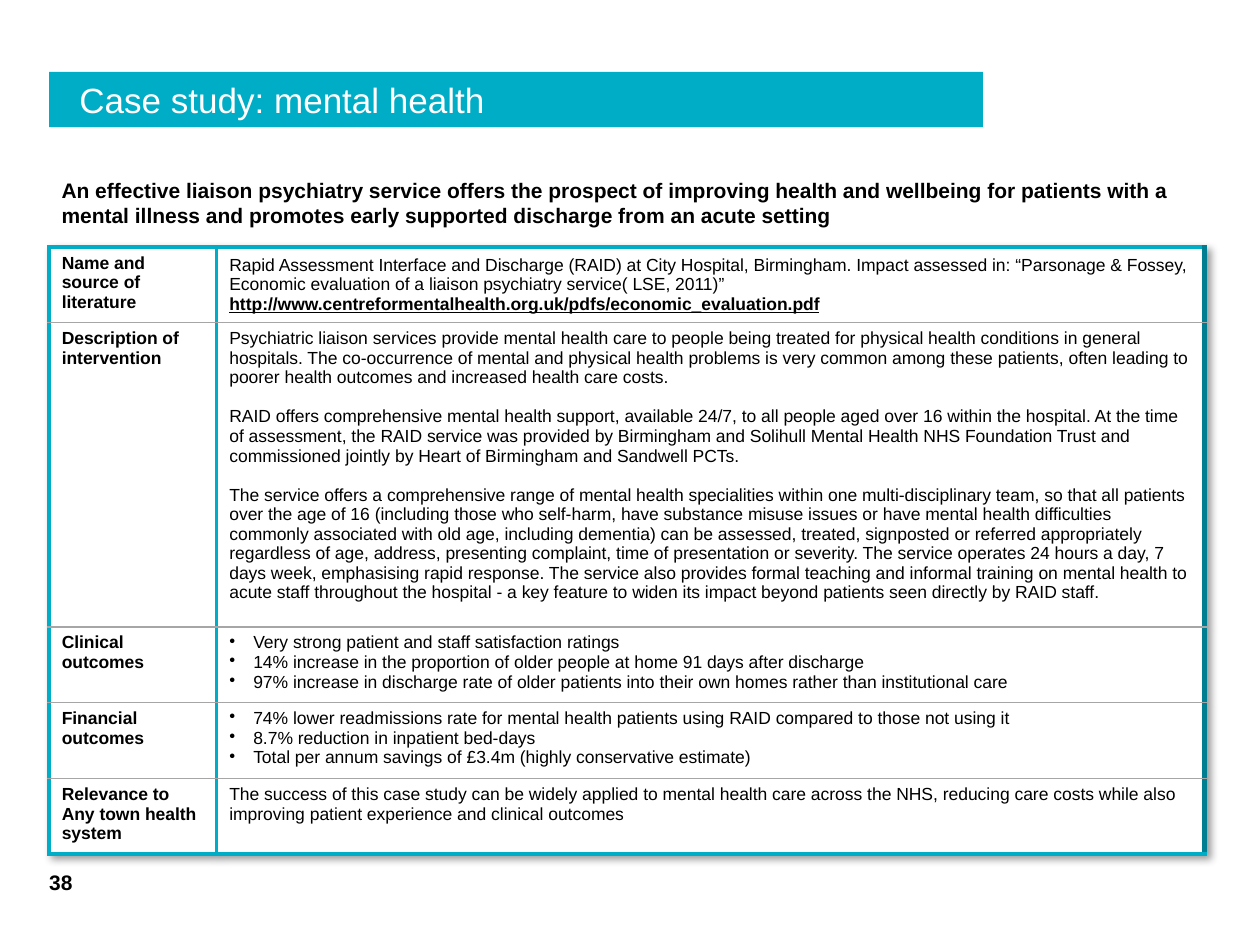
"""Build the mental health case study slide."""
from lxml import etree
from pptx import Presentation
from pptx import util as u
from pptx.dml.color import RGBColor
from pptx.enum import shapes, text
from pptx.oxml import parse_xml
from pptx.oxml.ns import nsdecls, qn

TEAL, DARK_TEAL, GREY = "00ADC6", "007E91", "A6A6A6"
BLACK, WHITE = "000000", "FFFFFF"
SHADOW = (
    f'<a:effectLst {nsdecls("a")}><a:outerShdw blurRad="50800" dist="38100" '
    'dir="2700000" algn="tl" rotWithShape="0"><a:prstClr val="black">'
    '<a:alpha val="40000"/></a:prstClr></a:outerShdw></a:effectLst>'
)
TOP, MIDDLE, BOTTOM = (
    text.MSO_ANCHOR.TOP, text.MSO_ANCHOR.MIDDLE, text.MSO_ANCHOR.BOTTOM)

COLUMN_WIDTHS = (1.33, 7.84)
CASE_ROWS = [
    (0.57, "Name and source of literature", [
        "Rapid Assessment Interface and Discharge (RAID) at City Hospital, Birmingham. Impact assessed in: “Parsonage & Fossey, Economic evaluation of a liaison psychiatry service( LSE, 2011)”",
        "http://www.centreformentalhealth.org.uk/pdfs/economic_evaluation.pdf",
    ], {}),
    (2.27, "Description of intervention", [
        "Psychiatric liaison services provide mental health care to people being treated for physical health conditions in general hospitals. The co-occurrence of mental and physical health problems is very common among these patients, often leading to poorer health outcomes and increased health care costs.",
        "RAID offers comprehensive mental health support, available 24/7, to all people aged over 16 within the hospital. At the time of assessment, the RAID service was provided by Birmingham and Solihull Mental Health NHS Foundation Trust and commissioned jointly by Heart of Birmingham and Sandwell PCTs.",
        "The service offers a comprehensive range of mental health specialities within one multi-disciplinary team, so that all patients over the age of 16 (including those who self-harm, have substance misuse issues or have mental health difficulties commonly associated with old age, including dementia) can be assessed, treated, signposted or referred appropriately regardless of age, address, presenting complaint, time of presentation or severity. The service operates 24 hours a day, 7 days week, emphasising rapid response. The service also provides formal teaching and informal training on mental health to acute staff throughout the hospital - a key feature to widen its impact beyond patients seen directly by RAID staff.",
    ], {"gap": 11.2}),
    (0.57, "Clinical outcomes", [
        "Very strong patient and staff satisfaction ratings",
        "14% increase in the proportion of older people at home 91 days after discharge",
        "97% increase in discharge rate of older patients into their own homes rather than institutional care",
    ], {"bullet": True}),
    (0.58, "Financial outcomes", [
        "74% lower readmissions rate for mental health patients using RAID compared to those not using it",
        "8.7% reduction in inpatient bed-days",
        "Total per annum savings of £3.4m (highly conservative estimate)",
    ], {"bullet": True}),
    (0.57, "Relevance to Any town health system", [
        "The success of this case study can be widely applied to mental health care across the NHS, reducing care costs while also improving patient experience and clinical outcomes",
    ], {}),
]


def colour(value):
    return RGBColor.from_string(value)


def inches(values):
    return [u.Inches(value) for value in values]


def apply(target, values):
    for name, value in values.items():
        setattr(target, name, value)


class CaseSlide:
    """Hold the text style and the slide being built."""

    def __init__(self, slide, font="Arial"):
        self.slide = slide
        self.font = font

    def add_wording(self, frame, paragraphs, size, ink=BLACK, bold=False, gap=0, bullet=False):
        for index, wording in enumerate(paragraphs):
            paragraph = frame.add_paragraph() if index else frame.paragraphs[0]
            if bullet:
                properties = paragraph._p.get_or_add_pPr()
                properties.set("marL", str(u.Inches(0.19)))
                properties.set("indent", str(u.Inches(-0.19)))
                etree.SubElement(properties, qn("a:buChar"), char="•")
            if index and gap:
                paragraph.space_before = u.Pt(gap)
            run = paragraph.add_run()
            run.text = wording
            is_address = wording.startswith("http")
            apply(run.font, {"name": self.font, "size": u.Pt(size),
                             "bold": bold or is_address, "underline": is_address})
            run.font.color.rgb = colour(ink)

    def frame(self, shape, anchor, insets):
        left, top, right, bottom = inches(insets)
        apply(shape.text_frame, {
            "word_wrap": True, "vertical_anchor": anchor, "margin_left": left,
            "margin_top": top, "margin_right": right, "margin_bottom": bottom})
        return shape.text_frame

    def banner(self, wording, box):
        bar = self.slide.shapes.add_shape(shapes.MSO_SHAPE.RECTANGLE, *inches(box))
        bar.shadow.inherit = False
        bar.fill.solid()
        bar.fill.fore_color.rgb = colour(TEAL)
        bar.line.fill.background()
        frame = self.frame(bar, MIDDLE, (0.24, 0, 0, 0))
        self.add_wording(frame, [wording], 20, WHITE)
        frame.paragraphs[0].alignment = text.PP_ALIGN.LEFT

    def label(self, wording, box, anchor=TOP, insets=(0, 0, 0, 0)):
        holder = self.slide.shapes.add_textbox(*inches(box))
        self.add_wording(self.frame(holder, anchor, insets), [wording], 12, bold=True)

    def borders(self, cell, edges):
        properties = cell._tc.get_or_add_tcPr()
        for index, (side, (ink, width)) in enumerate(edges.items()):
            properties.insert(index, parse_xml(
                f'<a:ln{side} {nsdecls("a")} w="{u.Pt(width)}"><a:solidFill>'
                f'<a:srgbClr val="{ink}"/></a:solidFill></a:ln{side}>'))

    def case_table(self, rows, left, top):
        heights = [row[0] for row in rows]
        box = (left, top, sum(COLUMN_WIDTHS), sum(heights))
        table = self.slide.shapes.add_table(
            len(rows), len(COLUMN_WIDTHS), *inches(box)).table
        apply(table, {"first_row": False, "horz_banding": False})
        table._tbl.tblPr.insert(0, parse_xml(SHADOW))
        for column, width in zip(table.columns, COLUMN_WIDTHS):
            column.width = u.Inches(width)
        frame_edge, row_edge = (TEAL, 2.25), (GREY, 1)
        for index, (height, heading, details, layout) in enumerate(rows):
            table.rows[index].height = u.Inches(height)
            heading_cell, detail_cell = table.rows[index].cells
            self.add_wording(heading_cell.text_frame, [heading], 10, bold=True)
            self.add_wording(detail_cell.text_frame, details, 10, **layout)
            detail_cell.vertical_anchor = TOP if index else MIDDLE
            for cell, right_edge in ((heading_cell, frame_edge),
                                     (detail_cell, (DARK_TEAL, 3))):
                cell.fill.solid()
                cell.fill.fore_color.rgb = colour(WHITE)
                self.borders(cell, {
                    "L": frame_edge, "R": right_edge,
                    "T": row_edge if index else frame_edge,
                    "B": row_edge if index < len(rows) - 1 else frame_edge})


def main():
    deck = Presentation()
    apply(deck, {"slide_width": u.Inches(10), "slide_height": u.Inches(7.5)})
    case = CaseSlide(deck.slides.add_slide(deck.slide_layouts[6]))
    case.banner("Case study: mental health", (0.39, 0.57, 7.41, 0.44))
    case.label("38", (0.39, 6.9, 0.33, 0.2), BOTTOM)
    case.label(
        "An effective liaison psychiatry service offers the prospect of improving health and wellbeing for patients with a mental illness and promotes early supported discharge from an acute setting",
        (0.39, 1.36, 9.3, 0.51), insets=(0.1, 0.05, 0.1, 0.05))
    case.case_table(CASE_ROWS, 0.39, 1.96)
    deck.save("out.pptx")


if __name__ == "__main__":
    main()
